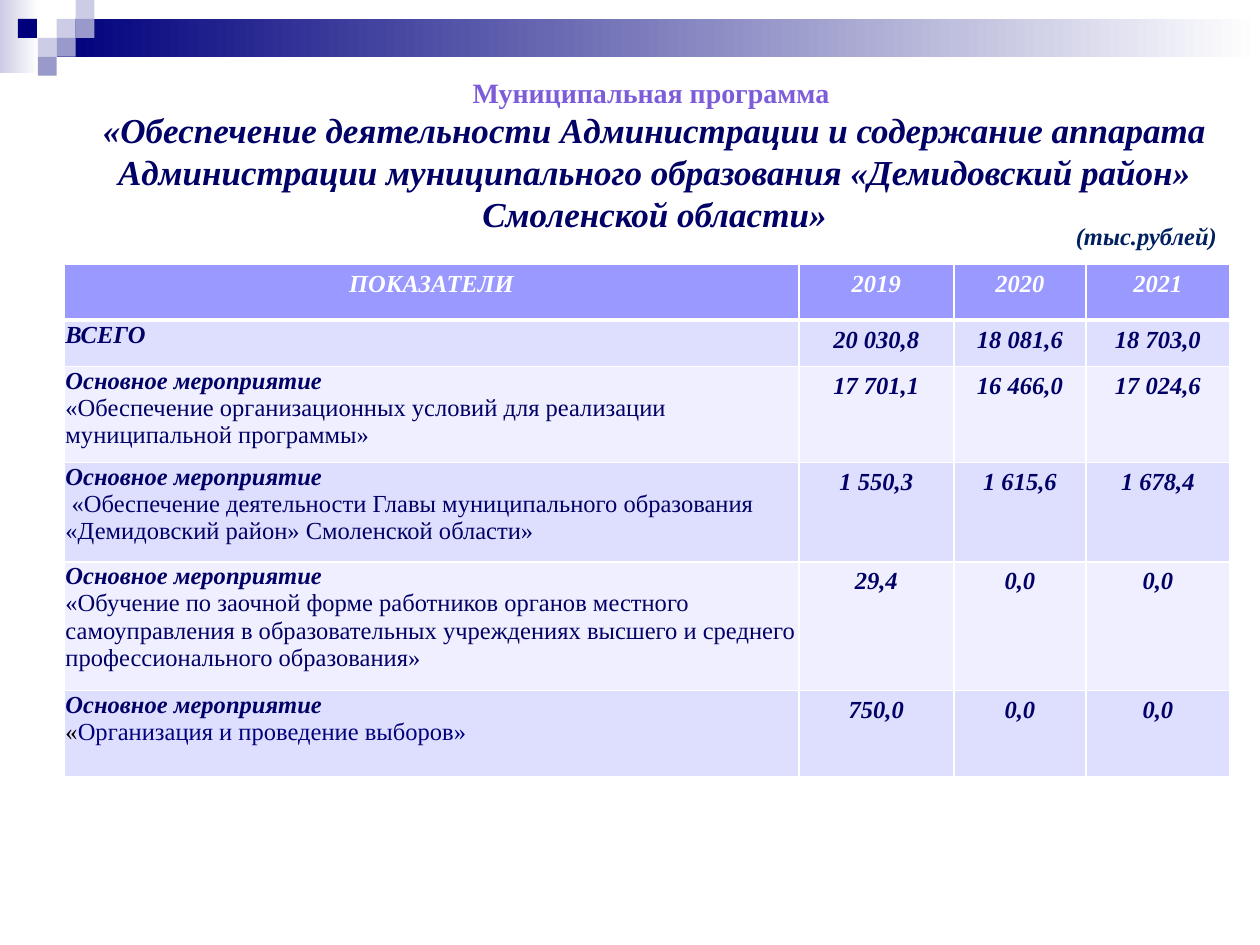
from dataclasses import dataclass
from typing import Optional

from lxml.etree import SubElement
from pptx import Presentation
from pptx.dml.color import RGBColor
from pptx.enum.shapes import MSO_SHAPE as Shape
from pptx.enum.text import MSO_ANCHOR as Anchor, MSO_AUTO_SIZE as AutoSize, PP_ALIGN as Align
from pptx.oxml.ns import qn
from pptx.util import Inches, Pt

FONT = "Times New Roman"
COLORS = {
    "navy": "00007D", "lilac": "CCCCE6", "violet": "9999CC", "white": "FFFFFF",
    "program": "7D5CDA", "ink": "000066", "unit": "002060", "black": "000000",
    "header": "9999FF", "odd": "DEDEFF", "even": "EFEFFF",
}
WIDTH, HEIGHT = 10, 7.5
TILE = 0.15  # side of one tile of the corner mosaic


@dataclass(frozen=True)
class Block:
    """A mosaic rectangle in tile columns and rows; with an end colour it fades."""
    column: float
    row: float
    columns: float
    rows: float
    color: str
    end: Optional[str] = None


@dataclass(frozen=True)
class Style:
    size: int = 14
    color: str = "ink"
    bold: bool = True
    italic: bool = True
    align: Align = Align.LEFT


@dataclass(frozen=True)
class Span:
    text: str
    color: Optional[str] = None


@dataclass(frozen=True)
class Measure:
    heading: str
    spans: tuple
    values: tuple
    height: float


BLOCKS = [
    Block(0, 0, 2.07, 3.87, "lilac", "white"),
    Block(3, 1, WIDTH / TILE - 3, 2, "navy", "white"),
    Block(3, 1, 1, 1, "lilac"),
    Block(4, 0, 1, 1, "lilac"),
    Block(4, 1, 1, 1, "violet"),
    Block(2, 2, 1, 1, "lilac"),
    Block(0.95, 1, 1, 1, "navy"),
    Block(3, 2, 1, 1, "violet"),
    Block(2, 3, 1, 1, "violet"),
]

HEADERS = ("ПОКАЗАТЕЛИ", "2019", "2020", "2021")
HEADER_HEIGHT = 0.44
COLUMN_WIDTHS = (5.83, 1.23, 1.05, 1.14)
ACTIVITY = "Основное мероприятие"
MEASURES = [
    Measure("ВСЕГО", (), ("20 030,8", "18 081,6", "18 703,0"), 0.37),
    Measure(ACTIVITY, (Span("«Обеспечение организационных условий для реализации "
                            "муниципальной программы»"),),
            ("17 701,1", "16 466,0", "17 024,6"), 0.76),
    Measure(ACTIVITY, (Span(" «Обеспечение деятельности Главы муниципального образования "
                            "«Демидовский район» Смоленской области»"),),
            ("1 550,3", "1 615,6", "1 678,4"), 0.79),
    Measure(ACTIVITY, (Span("«Обучение по заочной форме работников органов местного "
                            "самоуправления в образовательных учреждениях высшего и "
                            "среднего профессионального образования»"),),
            ("29,4", "0,0", "0,0"), 1.02),
    Measure(ACTIVITY, (Span("«", "black"), Span("Организация и проведение выборов»", "navy")),
            ("750,0", "0,0", "0,0"), 0.69),
]

HEADING = Style(align=Align.LEFT)
BODY = Style(bold=False, italic=False)
VALUE = Style(align=Align.CENTER)
HEADER = Style(color="white", align=Align.CENTER)


def rgb(name: str) -> RGBColor:
    return RGBColor.from_string(COLORS[name])


def write(frame, lines: list) -> None:
    """Fill a text frame with (spans, style) pairs, one paragraph each."""
    for index, (spans, style) in enumerate(lines):
        para = frame.add_paragraph() if index else frame.paragraphs[0]
        para.alignment = style.align
        font = para.font
        font.name, font.size = FONT, Pt(style.size)
        font.bold, font.italic = style.bold, style.italic
        font.color.rgb = rgb(style.color)
        for span in spans:
            run = para.add_run()
            run.text = span.text
            if span.color:
                run.font.color.rgb = rgb(span.color)


def draw_block(page, block: Block) -> None:
    box = page.shapes.add_shape(
        Shape.RECTANGLE, *(Inches(n * TILE) for n in
                           (block.column, block.row, block.columns, block.rows)))
    box.shadow.inherit = False
    box.line.fill.background()
    if block.end:
        box.fill.gradient()
        box.fill.gradient_angle = 0
        for stop, color in zip(box.fill.gradient_stops, (block.color, block.end)):
            stop.color.rgb = rgb(color)
    else:
        box.fill.solid()
        box.fill.fore_color.rgb = rgb(block.color)


def paint_cell(cell, fill: str, bottom: int = 1, top: int = 1) -> None:
    """Give a cell white borders (points) and a solid fill."""
    properties = cell._tc.get_or_add_tcPr()
    for side, points in (("L", 1), ("R", 1), ("T", top), ("B", bottom)):
        line = SubElement(properties, qn(f"a:ln{side}"), w=str(Pt(points)))
        SubElement(SubElement(line, qn("a:solidFill")), qn("a:srgbClr"), val=COLORS["white"])
    cell.fill.solid()
    cell.fill.fore_color.rgb = rgb(fill)


def draw_table(page, left: float, top: float) -> None:
    heights = [HEADER_HEIGHT] + [measure.height for measure in MEASURES]
    table = page.shapes.add_table(
        len(heights), len(HEADERS), Inches(left), Inches(top),
        Inches(sum(COLUMN_WIDTHS)), Inches(sum(heights))).table
    for column, width in zip(table.columns, COLUMN_WIDTHS):
        column.width = Inches(width)
    for row, height in zip(table.rows, heights):
        row.height = Inches(height)

    for column, text in enumerate(HEADERS):
        cell = table.cell(0, column)
        paint_cell(cell, "header", bottom=3)
        write(cell.text_frame, [((Span(text),), HEADER)])

    for row, measure in enumerate(MEASURES, start=1):
        for column in range(len(HEADERS)):
            paint_cell(table.cell(row, column), "odd" if row % 2 else "even",
                       top=3 if row == 1 else 1)
        label = table.cell(row, 0)
        label.margin_left = label.margin_right = label.margin_top = Inches(0.01)
        label.margin_bottom = 0
        lines = [((Span(measure.heading),), HEADING)]
        if measure.spans:
            lines.append((measure.spans, BODY))
        write(label.text_frame, lines)
        for column, value in enumerate(measure.values, start=1):
            write(table.cell(row, column).text_frame, [((Span(value),), VALUE)])


def place(box, left: float, top: float, width: float, height: float) -> None:
    box.left, box.top = Inches(left * WIDTH), Inches(top * HEIGHT)
    box.width, box.height = Inches(width * WIDTH), Inches(height * HEIGHT)


def main() -> None:
    deck = Presentation()
    deck.slide_width, deck.slide_height = Inches(WIDTH), Inches(HEIGHT)
    page = deck.slides.add_slide(deck.slide_layouts[5])

    # Corner mosaic and fading band
    for block in BLOCKS:
        draw_block(page, block)

    # Title
    title = page.shapes.title
    place(title, 0.035, 0.073, 0.969, 0.184)
    title.text_frame.word_wrap = True
    title.text_frame.auto_size = AutoSize.NONE
    title.text_frame.vertical_anchor = Anchor.TOP
    write(title.text_frame, [
        ((Span("Муниципальная программа "),),
         Style(16, "program", italic=False, align=Align.CENTER)),
        ((Span("«Обеспечение деятельности Администрации и содержание аппарата "
               "Администрации муниципального образования «Демидовский район» "
               "Смоленской области»"),), Style(20, align=Align.CENTER)),
    ])

    # Indicators by year
    draw_table(page, left=0.51, top=2.1)

    # Unit of measure
    unit = page.shapes.add_textbox(0, 0, 0, 0)
    place(unit, 0.844, 0.227, 0.144, 0.045)
    unit.text_frame.word_wrap = True
    write(unit.text_frame, [((Span("(тыс.рублей)"),), Style(color="unit"))])

    deck.save("out.pptx")


if __name__ == "__main__":
    main()
